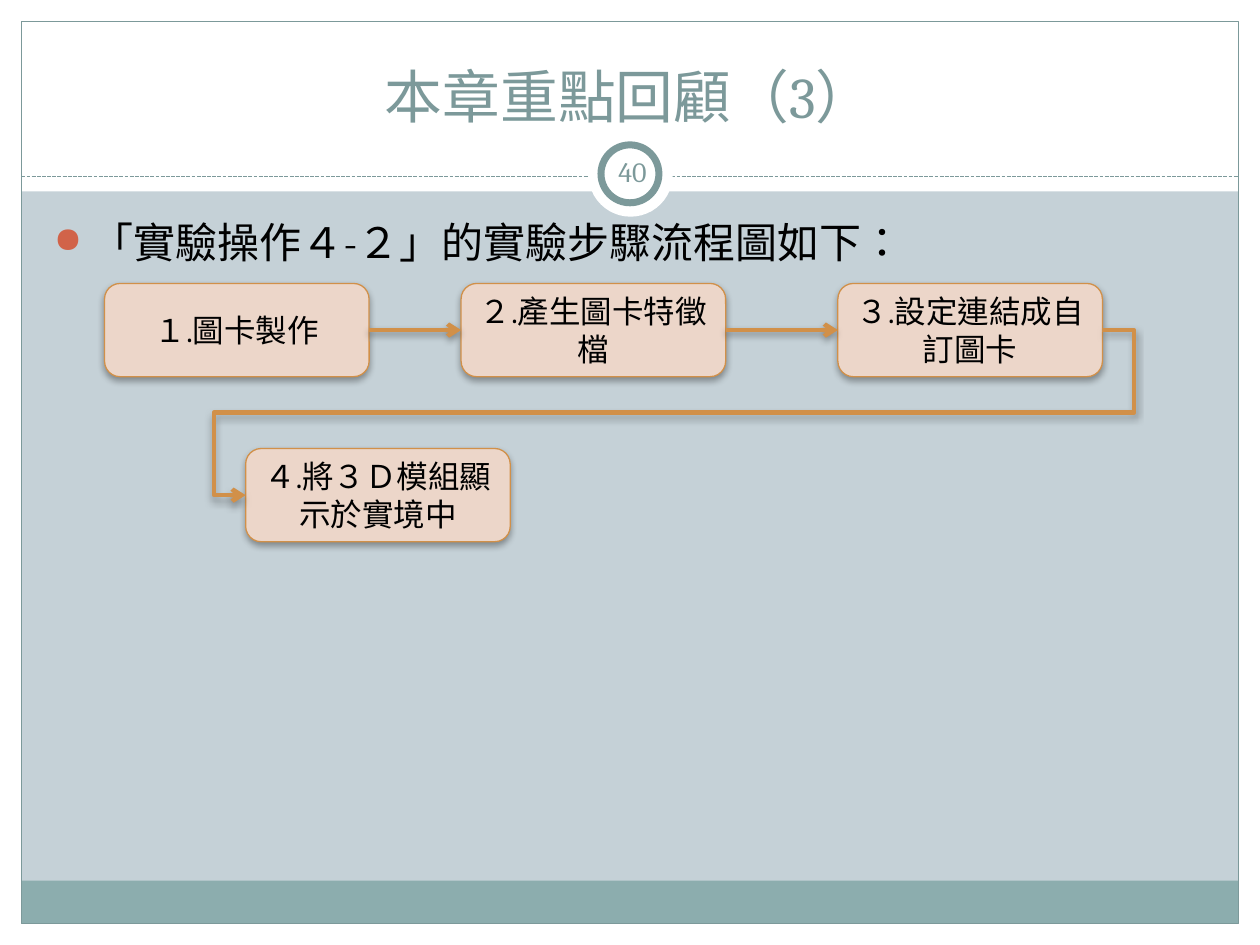
"""Build the chapter review slide with the flow of experiment steps."""
from lxml import etree
from pptx import Presentation
from pptx import util as u
from pptx.dml.color import RGBColor
from pptx.enum import dml, shapes, text
from pptx.oxml.ns import qn

COLUMNS, ROWS = 100, 75
CELL = u.Inches(0.1)
FONT = "Cambria"
WHITE = RGBColor(0xFF, 0xFF, 0xFF)
BLACK = RGBColor(0, 0, 0)
BACKDROP = RGBColor(0xC5, 0xD1, 0xD7)
FOOTER = RGBColor(0x8C, 0xAD, 0xAE)
TEAL = RGBColor(0x7C, 0x99, 0x9A)
PEACH = RGBColor(0xEC, 0xD6, 0xC9)
ORANGE = RGBColor(0xD1, 0x90, 0x49)
RUST = RGBColor(0xD1, 0x63, 0x49)

MARGIN = 1.7
INNER = COLUMNS - 2 * MARGIN
STEP_SIZE = (21, 7.4)
STEPS = [
    ("１.圖卡製作", 8.3, 22.5),
    ("２.產生圖卡特徵檔", 36.6, 22.5),
    ("３.設定連結成自訂圖卡", 66.5, 22.5),
    ("４.將３Ｄ模組顯示於實境中", 19.5, 35.6),
]


def cells(*counts):
    """Turn counts of grid cells into lengths."""
    return [round(count * CELL) for count in counts]


def add_child(parent, tag, **attributes):
    """Append a drawing element with the given attributes."""
    child = etree.SubElement(parent, qn(tag))
    for key, value in attributes.items():
        child.set(key, str(value))
    return child


def add_shadow(element):
    """Give a shape or connector a soft shadow straight below it."""
    properties = element._element.spPr
    effects = properties.find(qn("a:effectLst"))
    if effects is None:
        effects = add_child(properties, "a:effectLst")
    shadow = add_child(effects, "a:outerShdw", blurRad=u.Pt(4), dist=u.Pt(2),
                       dir=90 * 60000, rotWithShape=0)
    tint = add_child(shadow, "a:srgbClr", val=BLACK)
    add_child(tint, "a:alpha", val=35000)


def add_panel(slide, kind, box, fill=None, line=None, width=0.75):
    """Add a preset shape without shadow."""
    panel = slide.shapes.add_shape(kind, *cells(*box))
    panel.shadow.inherit = False
    if fill is None:
        panel.fill.background()
    else:
        panel.fill.solid()
        panel.fill.fore_color.rgb = fill
    if line is None:
        panel.line.fill.background()
    else:
        panel.line.color.rgb = line
        panel.line.width = u.Pt(width)
    return panel


def write(holder, words, size, color, align, anchor):
    """Put one formatted paragraph into a shape or text box."""
    frame = holder.text_frame
    frame.word_wrap = True
    frame.vertical_anchor = anchor
    frame.text = words
    paragraph = frame.paragraphs[0]
    paragraph.alignment = align
    for run in paragraph.runs:
        run._r.get_or_add_rPr().set("lang", "zh-TW")
        run.font.name = FONT
        run.font.size = u.Pt(size)
        run.font.color.rgb = color
    return paragraph


def add_label(slide, box, words, size, color,
              align=text.PP_ALIGN.CENTER, anchor=text.MSO_ANCHOR.MIDDLE):
    """Add a text box with one paragraph."""
    label = slide.shapes.add_textbox(*cells(*box))
    return label, write(label, words, size, color, align, anchor)


def add_bullet(paragraph):
    """Give a paragraph a hanging round bullet."""
    properties = paragraph._p.get_or_add_pPr()
    properties.set("marL", str(u.Inches(0.3)))
    properties.set("indent", str(-u.Inches(0.3)))
    add_child(add_child(properties, "a:buClr"), "a:srgbClr", val=RUST)
    add_child(properties, "a:buSzPct", val=85000)
    add_child(properties, "a:buChar", char="●")


def add_step(slide, words, column, row):
    """Add one rounded step of the flow."""
    step = add_panel(slide, shapes.MSO_SHAPE.ROUNDED_RECTANGLE,
                     (column, row, *STEP_SIZE), PEACH, ORANGE)
    add_shadow(step)
    write(step, words, 18, BLACK, text.PP_ALIGN.CENTER, text.MSO_ANCHOR.MIDDLE)
    return step


def add_arrow(slide, start, end, kind=shapes.MSO_CONNECTOR.STRAIGHT):
    """Join the right side of one step to the left side of another."""
    arrow = slide.shapes.add_connector(kind, 0, 0, 0, 0)
    arrow.begin_connect(start, 3)
    arrow.end_connect(end, 1)
    arrow.line.color.rgb = ORANGE
    arrow.line.width = u.Pt(2.5)
    add_child(arrow.line._get_or_add_ln(), "a:tailEnd", type="arrow")
    add_shadow(arrow)
    return arrow


def wrap_around(arrow):
    """Route an elbow arrow out to the right and back in from the left."""
    geometry = arrow._element.spPr.find(qn("a:prstGeom"))
    geometry.set("prst", "bentConnector5")
    guides = geometry.find(qn("a:avLst"))
    for number, share in enumerate((-3700, 50000, 103700), 1):
        add_child(guides, "a:gd", name=f"adj{number}", fmla=f"val {share}")


def add_frame(slide):
    """Draw the white margins, footer band, outline, rule and number ring."""
    rectangle, oval = shapes.MSO_SHAPE.RECTANGLE, shapes.MSO_SHAPE.OVAL
    for margin in ((0, ROWS - MARGIN, COLUMNS, MARGIN), (0, 0, COLUMNS, 15.2),
                   (0, 0, MARGIN, ROWS), (COLUMNS - MARGIN, 0, MARGIN, ROWS)):
        add_panel(slide, rectangle, margin, WHITE)
    add_panel(slide, rectangle, (MARGIN, 69.9, INNER, 3.4), FOOTER)
    add_panel(slide, rectangle, (MARGIN, MARGIN, INNER, ROWS - 2 * MARGIN), line=TEAL)
    rule = slide.shapes.add_connector(
        shapes.MSO_CONNECTOR.STRAIGHT, *cells(MARGIN, 14, COLUMNS - MARGIN, 14))
    rule.line.color.rgb = TEAL
    rule.line.width = u.Pt(0.75)
    rule.line.dash_style = dml.MSO_LINE.SQUARE_DOT
    add_child(rule._element.spPr, "a:effectLst")
    add_panel(slide, oval, (46.7, 10.5, 6.7, 6.7), WHITE)
    add_panel(slide, oval, (47.7, 11.5, 4.6, 4.6), WHITE, TEAL, 4)


def add_texts(slide):
    """Write the title, the slide number and the bulleted lead."""
    add_label(slide, (3.3, 2.5, 93.3, 8.3), "本章重點回顧（3）", 33, TEAL,
              anchor=text.MSO_ANCHOR.BOTTOM)
    number, _ = add_label(slide, (47.7, 11.2, 5, 4.8), "40", 16, TEAL)
    number.text_frame.margin_left = number.text_frame.margin_right = u.Inches(0.05)
    _, lead = add_label(slide, (3.3, 16.7, 93, 50),
                        "「實驗操作４-２」的實驗步驟流程圖如下：", 24, BLACK,
                        text.PP_ALIGN.LEFT, text.MSO_ANCHOR.TOP)
    add_bullet(lead)


def add_flow(slide):
    """Draw the four steps and the arrows between them."""
    making, features, linking, display = [add_step(slide, *step) for step in STEPS]
    add_arrow(slide, making, features)
    add_arrow(slide, features, linking)
    wrap_around(add_arrow(slide, linking, display, shapes.MSO_CONNECTOR.ELBOW))


def main():
    """Build and save the slide."""
    deck = Presentation()
    deck.slide_width, deck.slide_height = cells(COLUMNS, ROWS)
    slide = deck.slides.add_slide(deck.slide_layouts[6])
    slide.background.fill.solid()
    slide.background.fill.fore_color.rgb = BACKDROP
    add_frame(slide)
    add_texts(slide)
    add_flow(slide)
    deck.save("out.pptx")


if __name__ == "__main__":
    main()
